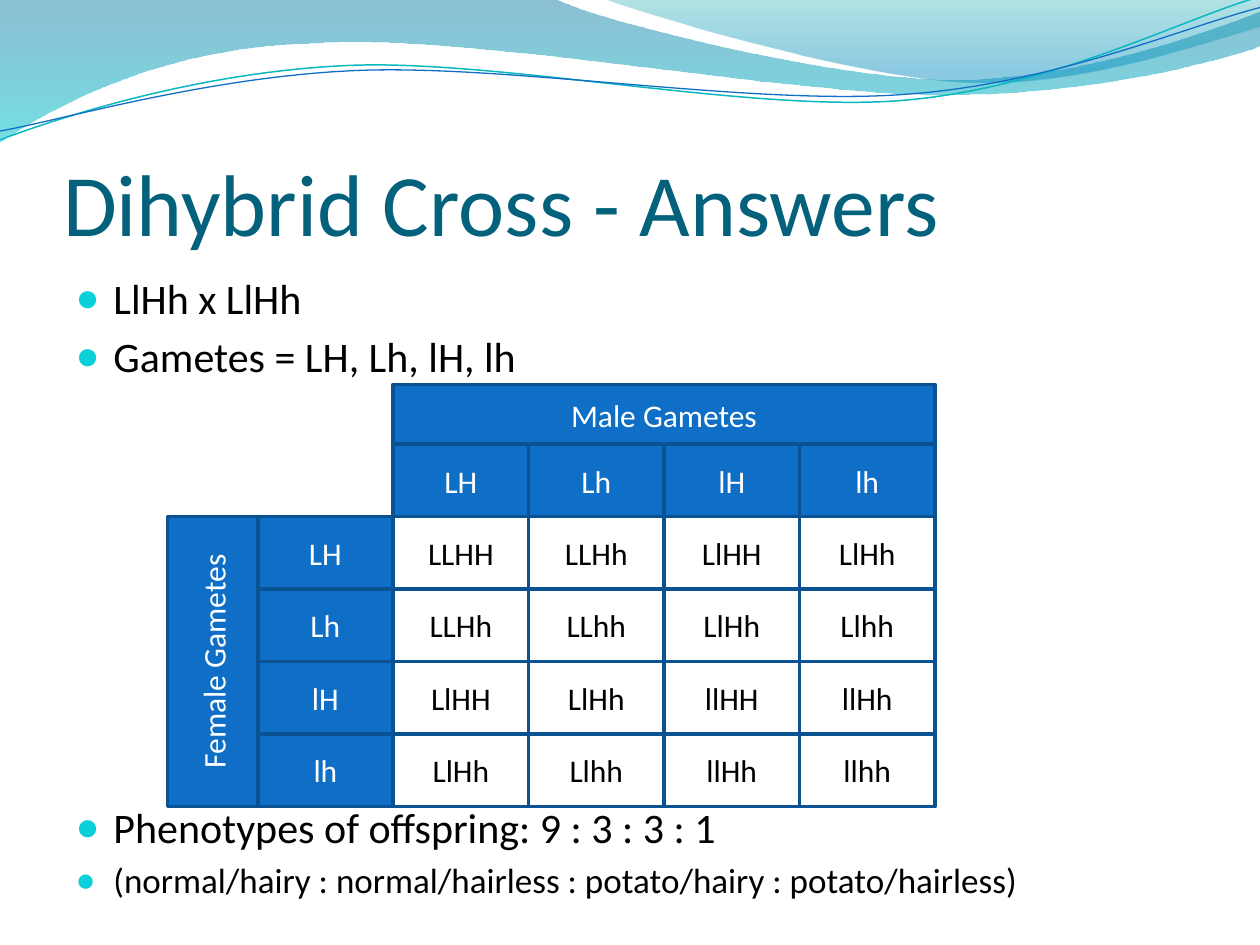
"""Build the dihybrid cross answer slide with its Punnett square."""
from dataclasses import dataclass
from typing import Optional

from lxml.etree import SubElement
from pptx import Presentation
from pptx.dml.color import RGBColor
from pptx.enum.shapes import MSO_SHAPE
from pptx.enum.text import MSO_ANCHOR, MSO_AUTO_SIZE, PP_ALIGN
from pptx.oxml.ns import qn
from pptx.util import Inches, Pt

COLUMNS, ROWS = 10, 7.5
UNIT = Inches(1)
FONT = "Calibri"
BLUE, NAVY, WHITE, BLACK = "0F6FC6", "0B5292", "FFFFFF", "000000"
GAMETES = ("LH", "Lh", "lH", "lh")
SQUARE_LEFT, SQUARE_TOP = 3.12, 4.1
CELL_WIDTH, CELL_HEIGHT = 4.3 / 4, 2.3 / 4


@dataclass(frozen=True)
class Stop:
    position: float
    color: str
    opacity: int


@dataclass(frozen=True)
class Wave:
    start: tuple
    segments: tuple
    stops: tuple = ()
    line: Optional[str] = None
    weight: float = 0


@dataclass(frozen=True)
class Cell:
    label: str
    left: float
    top: float
    width: float = CELL_WIDTH
    height: float = CELL_HEIGHT
    fill: str = BLUE
    ink: str = WHITE
    vertical: bool = False


@dataclass(frozen=True)
class Bullet:
    label: str
    size: int
    gap: float


WAVES = (
    Wave((0, 0), (
        (4.4, -0.01), (4.76, 0.17, 6.64, 0.63, 7.58, 0.63), (8.53, 0.63, 9.58, 0.26, 10, 0.09),
        (10.01, 0.36), (9.83, 0.44, 8.7, 0.76, 7.46, 0.75),
        (6.22, 0.75, 3.82, 0.28, 2.57, 0.34), (1.29, 0.36, 0.46, 0.83, -0.01, 1.13)),
        stops=(Stop(0, "0074A1", 45), Stop(1, "00C6CF", 55))),
    Wave((4.79, -0.01), (
        (5.09, 0.11, 6.82, 0.62, 7.69, 0.65), (8.56, 0.69, 9.61, 0.32, 10, 0.21), (10, 0)),
        stops=(Stop(0, "00A1A9", 30), Stop(0.8, "008BBF", 45))),
    Wave((0, 1.11), (
        (0.48, 0.93, 1.58, 0.57, 2.77, 0.52), (3.95, 0.47, 5.93, 0.89, 7.13, 0.8),
        (8.33, 0.71, 9.38, 0.15, 9.98, -0.02)), line="0AB8BF", weight=0.85),
    Wave((0, 1.04), (
        (0.47, 0.96, 1.64, 0.61, 2.83, 0.56), (4.03, 0.51, 5.97, 0.84, 7.17, 0.75),
        (8.36, 0.67, 9.41, 0.21, 10, 0.06)), line=BLUE, weight=0.75),
)

BULLETS = (
    Bullet("LlHh x LlHh", 24, 4.8),
    Bullet("Gametes = LH, Lh, lH, lh", 24, 4.8),
    Bullet("Phenotypes of offspring: 9 : 3 : 3 : 1", 24, 240),
    Bullet("(normal/hairy : normal/hairless : potato/hairy : potato/hairless)", 20, 4),
)


def rgb(color: str) -> RGBColor:
    """Turn a hex string into a colour."""
    return RGBColor.from_string(color)


def grid(length: float) -> int:
    """Turn grid columns or rows into slide units."""
    return round(length * UNIT)


def apply(target, values: dict) -> None:
    """Set every named value on the target."""
    for name, value in values.items():
        setattr(target, name, value)


def place(shape, left: float, top: float, width: float, height: float) -> None:
    """Move and size a shape on the grid."""
    apply(shape, {"left": grid(left), "top": grid(top),
                  "width": grid(width), "height": grid(height)})


def write(paragraph, label: str, size: float, color: str) -> None:
    """Add one formatted run to a paragraph."""
    run = paragraph.add_run()
    run.text = label
    apply(run.font, {"name": FONT, "size": Pt(size)})
    run.font.color.rgb = rgb(color)


def bend(band, segments: tuple) -> None:
    """Join each three-point segment of the outline into one cubic curve."""
    corners = iter(list(band.element.iter(qn("a:lnTo"))))
    for segment in segments:
        first = next(corners)
        if len(segment) == 6:
            first.tag = qn("a:cubicBezTo")
            for corner in (next(corners), next(corners)):
                first.append(corner[0])
                corner.getparent().remove(corner)


def draw_wave(slide, wave: Wave) -> None:
    """Draw a header wave behind the placeholders."""
    builder = slide.shapes.build_freeform(*map(grid, wave.start))
    builder.add_line_segments(
        [(grid(x), grid(y)) for segment in wave.segments
         for x, y in zip(segment[::2], segment[1::2])], close=bool(wave.stops))
    band = builder.convert_to_shape()
    bend(band, wave.segments)
    band.shadow.inherit = False
    if wave.stops:
        band.line.fill.background()
        band.fill.gradient()
        band.fill.gradient_angle = 270
        for slot, stop in zip(band.fill.gradient_stops, wave.stops):
            slot.position = stop.position
            slot.color.rgb = rgb(stop.color)
        for tint, stop in zip(band.element.iter(qn("a:srgbClr")), wave.stops):
            SubElement(tint, qn("a:alpha"), val=str(stop.opacity * 1000))
    else:
        band.fill.background()
        band.line.color.rgb = rgb(wave.line)
        band.line.width = Pt(wave.weight)
    slide.shapes.title.element.addprevious(band.element)


def draw_cell(slide, cell: Cell) -> None:
    """Draw one labelled box of the Punnett square."""
    box = slide.shapes.add_shape(MSO_SHAPE.RECTANGLE, *map(
        grid, (cell.left, cell.top, cell.width, cell.height)))
    box.shadow.inherit = False
    box.fill.solid()
    box.fill.fore_color.rgb = rgb(cell.fill)
    box.line.color.rgb = rgb(NAVY)
    box.line.width = Pt(2)
    apply(box.text_frame, {"word_wrap": True, "vertical_anchor": MSO_ANCHOR.MIDDLE})
    if cell.vertical:
        box.element.find(".//" + qn("a:bodyPr")).set("vert", "vert270")
    label = box.text_frame.paragraphs[0]
    label.alignment = PP_ALIGN.CENTER
    write(label, cell.label, 18, cell.ink)


def punnett_cells() -> list:
    """Work out all headings and offspring of the cross."""
    cells = [Cell("Male Gametes", SQUARE_LEFT, 3.05, 4 * CELL_WIDTH, 0.48)]
    lefts = [SQUARE_LEFT + n * CELL_WIDTH for n in range(4)]
    tops = [SQUARE_TOP + n * CELL_HEIGHT for n in range(4)]
    cells += [Cell(male, left, SQUARE_TOP - CELL_HEIGHT) for male, left in zip(GAMETES, lefts)]
    cells += [Cell(female, SQUARE_LEFT - CELL_WIDTH, top) for female, top in zip(GAMETES, tops)]
    cells.append(Cell("Female Gametes", 1.33, SQUARE_TOP, 0.72, 4 * CELL_HEIGHT, vertical=True))
    for female, top in zip(GAMETES, tops):
        for male, left in zip(GAMETES, lefts):
            offspring = "".join("".join(sorted(pair)) for pair in zip(female, male))
            cells.append(Cell(offspring, left, top, fill=WHITE, ink=BLACK))
    return cells


def write_bullet(paragraph, bullet: Bullet) -> None:
    """Write one round-bulleted line."""
    apply(paragraph, {"space_before": Pt(bullet.gap), "alignment": PP_ALIGN.LEFT})
    write(paragraph, bullet.label, bullet.size, BLACK)
    layout = paragraph._p.get_or_add_pPr()
    for name, indent in {"marL": 0.3, "indent": -0.3}.items():
        layout.set(name, str(grid(indent)))
    SubElement(SubElement(layout, qn("a:buClr")), qn("a:srgbClr"), val="0BD0D9")
    SubElement(layout, qn("a:buSzPct"), val="95000")
    SubElement(layout, qn("a:buChar"), char="●")


def main() -> None:
    """Build and save the slide."""
    deck = Presentation()
    apply(deck, {"slide_width": grid(COLUMNS), "slide_height": grid(ROWS)})
    slide = deck.slides.add_slide(deck.slide_layouts[1])
    for wave in WAVES:
        draw_wave(slide, wave)
    title, body = slide.shapes.title, slide.placeholders[1]
    place(title, 0.5, 0.77, 9, 1.25)
    apply(title.text_frame, {
        "vertical_anchor": MSO_ANCHOR.BOTTOM, "auto_size": MSO_AUTO_SIZE.NONE, "margin_left": 0,
        "margin_top": grid(0.05), "margin_right": 0, "margin_bottom": 0})
    heading = title.text_frame.paragraphs[0]
    heading.alignment = PP_ALIGN.LEFT
    write(heading, "Dihybrid Cross - Answers", 50, "04617B")
    place(body, 0.5, 2.11, 9, 5.39)
    body.text_frame.auto_size = MSO_AUTO_SIZE.NONE
    for number, bullet in enumerate(BULLETS):
        line = body.text_frame.add_paragraph() if number else body.text_frame.paragraphs[0]
        write_bullet(line, bullet)
    for cell in punnett_cells():
        draw_cell(slide, cell)
    deck.save("out.pptx")


if __name__ == "__main__":
    main()
